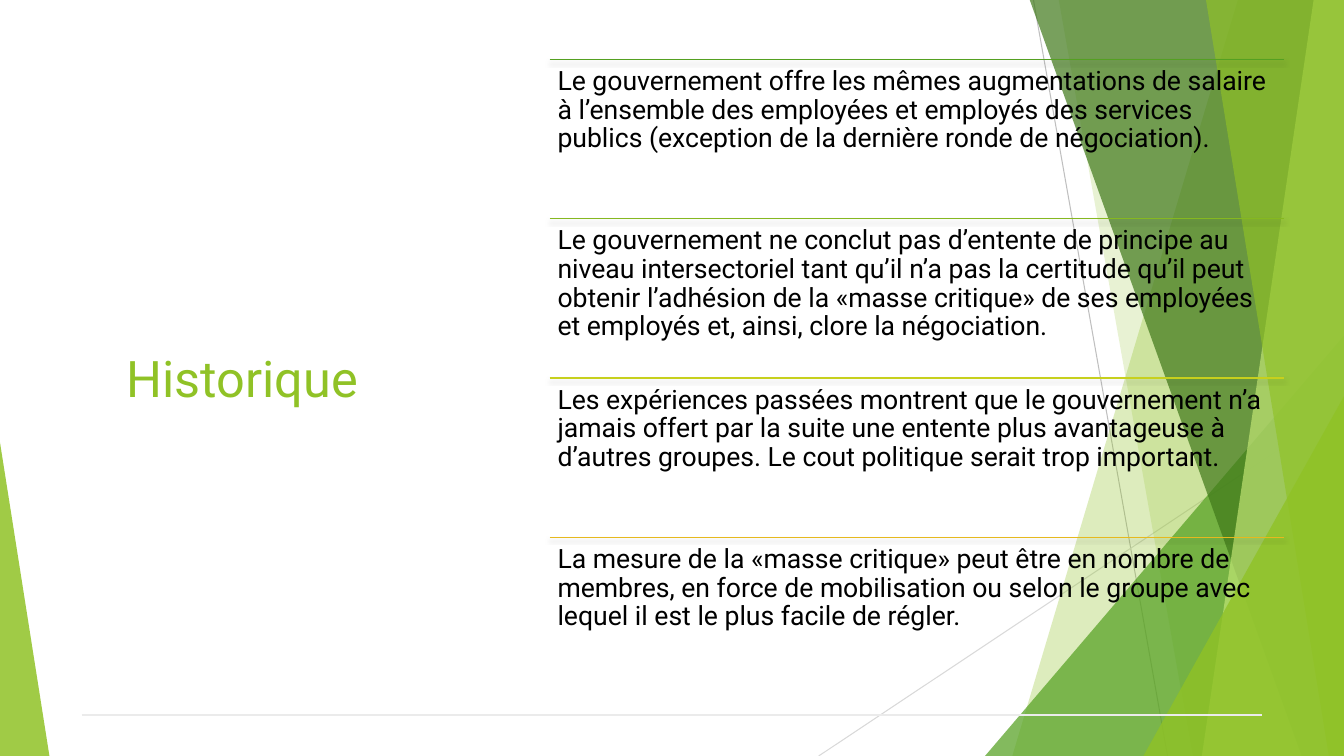
"""Build the "Historique" slide: faceted green decor, a title and four ruled notes."""
from dataclasses import dataclass
from typing import Any

from lxml.etree import SubElement as Sub
from pptx import Presentation
from pptx.dml.color import RGBColor as RGB
from pptx.enum.shapes import MSO_CONNECTOR as Conn, MSO_SHAPE as Kind
from pptx.enum.text import MSO_ANCHOR as Anchor, PP_ALIGN as Align
from pptx.oxml.ns import qn
from pptx.util import Emu, Pt

PX = 9144
WIDE, HIGH = 1333, 750
LEFT, RIGHT, TOP, STEP = 545, 1274, 59, 158
INSET = 8

GREEN = RGB(0x90, 0xC2, 0x26)
LEAF = RGB(0x54, 0xA0, 0x21)
MOSS = RGB(0x3F, 0x78, 0x19)
PALE = RGB(0xC0, 0xE4, 0x74)
GRASS = RGB(0x86, 0xB8, 0x20)
LIME = RGB(0xC7, 0xD0, 0x1D)
GOLD = RGB(0xE6, 0xB9, 0x1E)
BLACK = RGB(0, 0, 0)
GREY = RGB(0xBF, 0xBF, 0xBF)
SILVER = RGB(0xD9, 0xD9, 0xD9)
MIST = RGB(0xEB, 0xEB, 0xEB)


@dataclass(frozen=True)
class Rule:
    ends: tuple[int, int, int, int]
    color: RGB
    width: float
    shade: bool = False


@dataclass(frozen=True)
class Band:
    """A slanted band from its top-left and bottom-left to the right edge."""
    top: int
    base: int
    color: RGB
    alpha: int


@dataclass(frozen=True)
class Wedge:
    box: tuple[int, int, int, int]
    apex: int
    color: RGB
    alpha: int


@dataclass(frozen=True)
class Note:
    color: RGB
    text: str


RULES = [
    Rule((1025, 0, 1158, HIGH), GREY, 0.75),
    Rule((WIDE, 403, 812, HIGH), SILVER, 0.75),
]
FACETS = [
    Band(1228, 1004, GREEN, 30),
    Band(1050, 1183, GREEN, 20),
    Wedge((977, 333, 356, 417), 1, LEAF, 72),
    Band(1021, 1291, MOSS, 70),
    Band(1303, 1192, PALE, 70),
    Band(1196, 1318, GREEN, 65),
    Wedge((1134, 393, 199, 357), 1, GREEN, 80),
    Wedge((0, 439, 49, 311), 0, GREEN, 85),
]
NOTES = [
    Note(LEAF, "Le gouvernement offre les mêmes augmentations de salaire à l’ensemble "
         "des employées et employés des services publics (exception de la dernière "
         "ronde de négociation)."),
    Note(GRASS, "Le gouvernement ne conclut pas d’entente de principe au niveau "
         "intersectoriel tant qu’il n’a pas la certitude qu’il peut obtenir l’adhésion "
         "de la «masse critique» de ses employées et employés et, ainsi, clore la "
         "négociation."),
    Note(LIME, "Les expériences passées montrent que le gouvernement n’a jamais offert "
         "par la suite une entente plus avantageuse à d’autres groupes. Le cout "
         "politique serait trop important."),
    Note(GOLD, "La mesure de la «masse critique» peut être en nombre de membres, en "
         "force de mobilisation ou selon le groupe avec lequel il est le plus facile "
         "de régler."),
]


def scale(*sizes: int) -> list[Emu]:
    return [Emu(size * PX) for size in sizes]


def apply(target: Any, form: dict[str, Any]) -> None:
    for name, value in form.items():
        setattr(target, name, value)


def draw_rule(slide: Any, rule: Rule) -> None:
    line = slide.shapes.add_connector(Conn.STRAIGHT, *scale(*rule.ends))
    line.line.color.rgb = rule.color
    line.line.width = Pt(rule.width)
    effects = Sub(line._element.spPr, qn("a:effectLst"))
    if rule.shade:
        shadow = Sub(effects, qn("a:outerShdw"), blurRad=str(Pt(3)),
                     dist=str(Pt(2)), dir="5400000", rotWithShape="0")
        tint = Sub(shadow, qn("a:srgbClr"), val=str(BLACK))
        Sub(tint, qn("a:alpha"), val="35000")


def draw_facet(slide: Any, facet: Band | Wedge) -> None:
    if isinstance(facet, Band):
        pen = slide.shapes.build_freeform(facet.top, -1, scale=PX)
        pen.add_line_segments([(WIDE, -1), (WIDE, HIGH), (facet.base, HIGH)])
        shape = pen.convert_to_shape()
    else:
        shape = slide.shapes.add_shape(Kind.ISOSCELES_TRIANGLE, *scale(*facet.box))
        shape.adjustments[0] = facet.apex
    shape.shadow.inherit = False
    shape.line.fill.background()
    shape.fill.solid()
    shape.fill.fore_color.rgb = facet.color
    tint = shape._element.spPr.find(qn("a:solidFill"))[0]
    Sub(tint, qn("a:alpha"), val=str(facet.alpha * 1000))


def draw_title(slide: Any, text: str) -> None:
    title = slide.shapes.title
    left, top, width, height = scale(59, 118, 363, 513)
    apply(title, {"left": left, "top": top, "width": width, "height": height})
    frame = title.text_frame
    frame.text = text
    frame.vertical_anchor = Anchor.MIDDLE
    para = frame.paragraphs[0]
    para.alignment = Align.CENTER
    apply(para.runs[0].font, {"name": "Roboto", "size": Pt(36)})
    para.runs[0].font.color.rgb = GREEN


def draw_note(slide: Any, note: Note, top: int) -> None:
    draw_rule(slide, Rule((LEFT, top, RIGHT, top), note.color, 1, True))
    box = slide.shapes.add_textbox(*scale(LEFT, top, RIGHT - LEFT, STEP))
    frame = box.text_frame
    sides = ("left", "top", "right", "bottom")
    apply(frame, {f"margin_{side}": Emu(INSET * PX) for side in sides})
    apply(frame, {"word_wrap": True, "text": note.text})
    para = frame.paragraphs[0]
    para.line_spacing = 0.9
    apply(para.runs[0].font, {"name": "Roboto", "size": Pt(19)})
    para.runs[0].font.color.rgb = BLACK


def main() -> None:
    deck = Presentation()
    deck.slide_width, deck.slide_height = scale(WIDE, HIGH)
    slide = deck.slides.add_slide(deck.slide_layouts[5])
    for rule in RULES:
        draw_rule(slide, rule)
    for facet in FACETS:
        draw_facet(slide, facet)
    draw_rule(slide, Rule((81, 709, 1252, 709), MIST, 1.5))
    draw_title(slide, "Historique")
    for row, note in enumerate(NOTES):
        draw_note(slide, note, TOP + row * STEP)
    deck.save("out.pptx")


if __name__ == "__main__":
    main()
